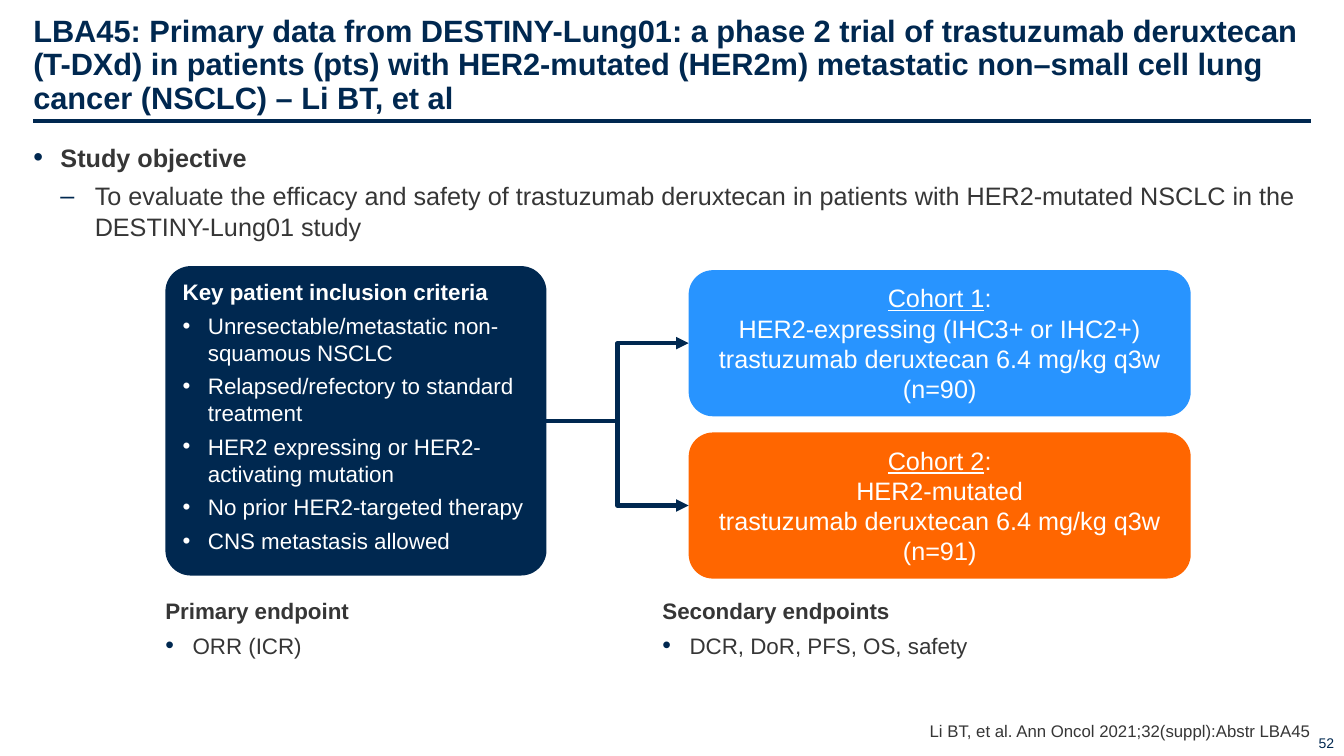
import pptx
import pptx.util
import pptx.dml.color
import pptx.enum.shapes
import pptx.enum.text
import pptx.oxml.ns
from dataclasses import dataclass
from lxml import etree

Inches = pptx.util.Inches
Pt = pptx.util.Pt
Align = pptx.enum.text.PP_ALIGN
Anchor = pptx.enum.text.MSO_ANCHOR
Shapes = pptx.enum.shapes.MSO_SHAPE
Connectors = pptx.enum.shapes.MSO_CONNECTOR


@dataclass(frozen=True)
class Theme:
    """Colours, font and type sizes of the slide."""
    font: str = "Arial"
    navy: str = "002850"
    grey: str = "363636"
    white: str = "FFFFFF"
    blue: str = "2894FF"
    orange: str = "FF6600"
    title: int = 22
    body: int = 18
    detail: int = 16
    citation: int = 12
    number: int = 10


THEME = Theme()


def rgb(value):
    """Turn a hex string into a colour."""
    return pptx.dml.color.RGBColor.from_string(value)


def child(parent, tag, **attributes):
    """Append a drawing element to a parent."""
    return etree.SubElement(parent, pptx.oxml.ns.qn(tag), attributes)


def add_span(para, text, size, color, bold=False, underline=False):
    """Add one formatted run."""
    span = para.add_run()
    span.text = text
    font = span.font
    font.name, font.size, font.color.rgb = THEME.font, Pt(size), rgb(color)
    font.bold, font.underline = bold, underline


def next_para(frame):
    """Return the first paragraph while it is empty, otherwise a new one."""
    first = frame.paragraphs[0]
    para = first if not first.runs else frame.add_paragraph()
    para.space_before = Pt(0)
    return para


def set_bullet(para, mark, color, margin, hanging, percent=100):
    """Give a paragraph a bullet with a hanging indent."""
    properties = para._p.get_or_add_pPr()
    properties.set("marL", str(Inches(margin)))
    properties.set("indent", str(-Inches(hanging)))
    child(child(properties, "a:buClr"), "a:srgbClr", val=color)
    child(properties, "a:buSzPct", val=str(percent * 1000))
    child(properties, "a:buFont", typeface=THEME.font)
    child(properties, "a:buChar", char=mark)


def set_frame(shape, insets, anchor=Anchor.TOP):
    """Set wrapping, insets in left-top-right-bottom order and anchor."""
    frame = shape.text_frame
    frame.word_wrap = True
    frame.auto_size = pptx.enum.text.MSO_AUTO_SIZE.NONE
    frame.vertical_anchor = anchor
    (frame.margin_left, frame.margin_top,
     frame.margin_right, frame.margin_bottom) = map(Inches, insets)
    return frame


def place(shape, box):
    """Move a shape into a box."""
    shape.left, shape.top, shape.width, shape.height = map(Inches, box)


def style_line(line, width):
    """Make a connector navy and free of shadow."""
    line.line.color.rgb = rgb(THEME.navy)
    line.line.width = Pt(width)
    child(line._element.spPr, "a:effectLst")


def add_heading(page, box, text):
    """Fill the title placeholder and rule a line below it."""
    left, top, width, height = box
    title = page.shapes.title
    place(title, box)
    para = next_para(set_frame(title, (0, 0.05, 0, 0), Anchor.BOTTOM))
    para.alignment, para.line_spacing = Align.LEFT, 0.9
    add_span(para, text, THEME.title, THEME.navy, bold=True)
    rule = top + height + 0.05
    line = page.shapes.add_connector(
        Connectors.STRAIGHT, *map(Inches, (left, rule, left + width, rule)))
    style_line(line, 2.25)


def add_objective(page, box, heading, detail):
    """Fill the body placeholder with the study objective."""
    body = page.placeholders[1]
    place(body, box)
    frame = set_frame(body, (0, 0.05, 0, 0.05))
    for level, text in enumerate((heading, detail)):
        para = next_para(frame)
        para.level, para.space_after = level, Pt(6)
        if level:
            set_bullet(para, "–", THEME.navy, 0.61, 0.34)
        else:
            set_bullet(para, "•", THEME.navy, 0.27, 0.27, 110)
        add_span(para, text, THEME.body, THEME.grey, bold=not level)


def add_card(page, box, color, radius):
    """Add a rounded rectangle with a plain fill."""
    card = page.shapes.add_shape(Shapes.ROUNDED_RECTANGLE, *map(Inches, box))
    card.adjustments[0] = radius
    card.shadow.inherit = False
    card.fill.solid()
    card.fill.fore_color.rgb = rgb(color)
    card.line.fill.background()
    return card


def add_criteria(page, box, heading, criteria):
    """Add the card of inclusion criteria."""
    card = add_card(page, box, THEME.navy, 0.082)
    frame = set_frame(card, (0.1, 0.05, 0.1, 0.05))
    for index, text in enumerate((heading, *criteria)):
        para = next_para(frame)
        para.alignment, para.space_after = Align.LEFT, Pt(4.8)
        if index:
            set_bullet(para, "•", THEME.white, 0.25, 0.25)
        add_span(para, text, THEME.detail, THEME.white, bold=not index)
    return card


def add_cohort(page, box, color, name, group, size):
    """Add one treatment cohort card."""
    card = add_card(page, box, color, 0.167)
    frame = set_frame(card, (0.1, 0, 0.1, 0), Anchor.MIDDLE)
    para = next_para(frame)
    para.alignment = Align.CENTER
    add_span(para, name, THEME.body, THEME.white, underline=True)
    add_span(para, ":", THEME.body, THEME.white)
    para.add_line_break()
    add_span(para, group, THEME.body, THEME.white)
    for text in ("trastuzumab deruxtecan 6.4 mg/kg q3w", size):
        para = next_para(frame)
        para.alignment = Align.CENTER
        add_span(para, text, THEME.body, THEME.white)
    return card


def add_arrow(page, source, target):
    """Join the right side of one card to the left side of another."""
    arrow = page.shapes.add_connector(Connectors.ELBOW, 0, 0, 0, 0)
    arrow.begin_connect(source, 3)
    arrow.end_connect(target, 1)
    style_line(arrow, 3)
    child(arrow.line._get_or_add_ln(), "a:tailEnd", type="triangle")


def add_endpoint(page, box, heading, measures):
    """Add an endpoint heading with its measures."""
    frame = set_frame(page.shapes.add_textbox(*map(Inches, box)), (0, 0.05, 0, 0.05))
    for index, text in enumerate((heading, measures)):
        para = next_para(frame)
        para.space_after = Pt(6)
        if index:
            set_bullet(para, "•", THEME.navy, 0.27, 0.27, 110)
        add_span(para, text, THEME.detail, THEME.grey, bold=not index)


def add_footer(page, box, text, size, color, insets):
    """Add a right-aligned line at the foot of the slide."""
    frame = set_frame(page.shapes.add_textbox(*map(Inches, box)), insets, Anchor.BOTTOM)
    para = next_para(frame)
    para.alignment = Align.RIGHT
    add_span(para, text, size, color)


def main():
    """Build and save the slide."""
    deck = pptx.Presentation()
    deck.slide_width, deck.slide_height = Inches(13.33), Inches(7.5)
    page = deck.slides.add_slide(deck.slide_layouts[1])
    add_heading(page, (0.33, 0.12, 12.67, 1.03),
                "LBA45: Primary data from DESTINY-Lung01: a phase 2 trial of trastuzumab "
                "deruxtecan (T-DXd) in patients (pts) with HER2-mutated (HER2m) metastatic "
                "non–small cell lung cancer (NSCLC) – Li BT, et al")
    add_objective(page, (0.33, 1.36, 12.67, 5.53), "Study objective",
                  "To evaluate the efficacy and safety of trastuzumab deruxtecan in patients "
                  "with HER2-mutated NSCLC in the DESTINY-Lung01 study")
    criteria = add_criteria(page, (1.64, 2.64, 3.78, 3.07), "Key patient inclusion criteria", (
        "Unresectable/metastatic non-squamous NSCLC",
        "Relapsed/refectory to standard treatment",
        "HER2 expressing or HER2-activating mutation",
        "No prior HER2-targeted therapy",
        "CNS metastasis allowed"))
    cohorts = ((THEME.blue, "Cohort 1", "HER2-expressing (IHC3+ or IHC2+)", "(n=90)"),
               (THEME.orange, "Cohort 2", "HER2-mutated", "(n=91)"))
    for index, cohort in enumerate(cohorts):
        card = add_cohort(page, (6.83, 2.68 + index * 1.61, 4.98, 1.45), *cohort)
        add_arrow(page, criteria, card)
    add_endpoint(page, (1.64, 5.87, 4.67, 1.12), "Primary endpoint", "ORR (ICR)")
    add_endpoint(page, (6.57, 5.87, 4.57, 1.12), "Secondary endpoints",
                 "DCR, DoR, PFS, OS, safety")
    add_footer(page, (6.98, 7.13, 6.02, 0.22),
               "Li BT, et al. Ann Oncol 2021;32(suppl):Abstr LBA45",
               THEME.citation, THEME.grey, (0, 0, 0, 0))
    add_footer(page, (12.68, 7.1, 0.65, 0.4), "52",
               THEME.number, THEME.navy, (0.1, 0.05, 0.1, 0.05))
    deck.save("out.pptx")


if __name__ == "__main__":
    main()
